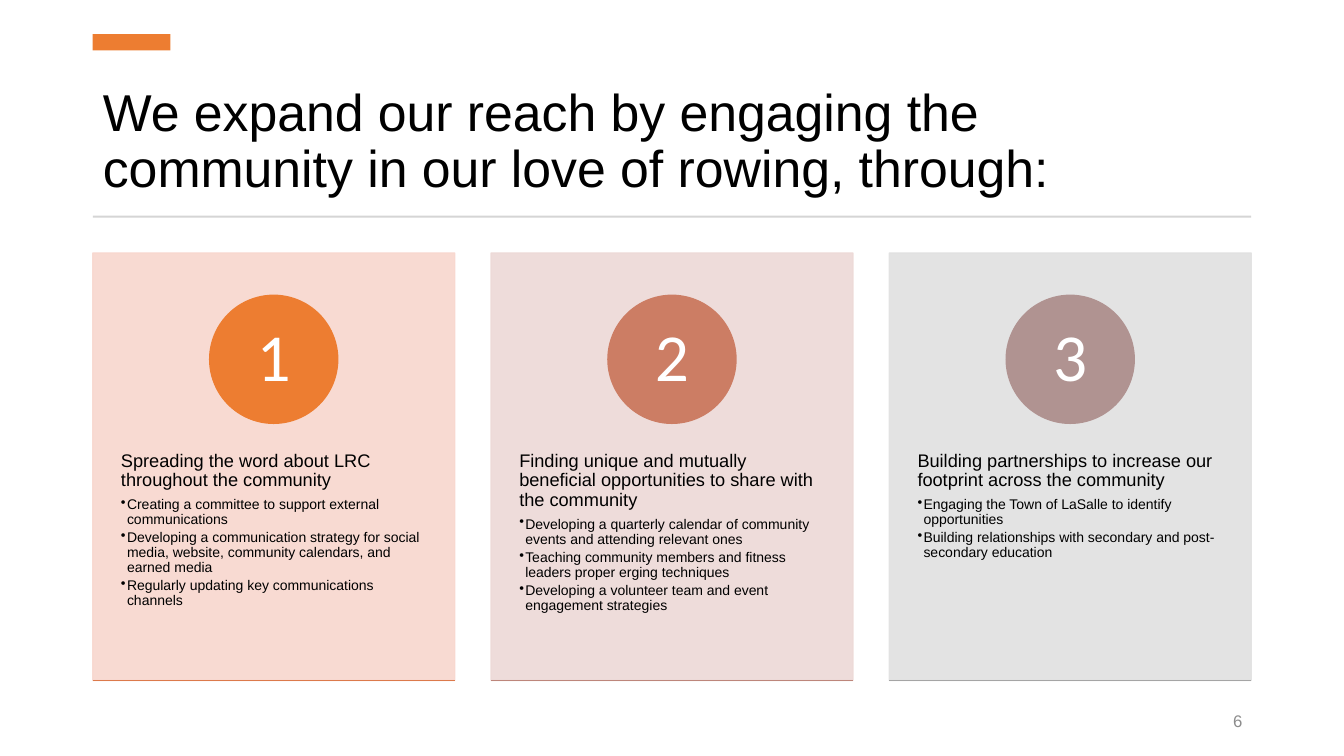
from dataclasses import dataclass

from lxml import etree
from pptx import Presentation, util as u
from pptx.dml import color
from pptx.enum import shapes, text
from pptx.oxml import ns

IN = u.Inches


@dataclass(frozen=True)
class Theme:
    """Colours, fonts and type sizes of the deck."""
    ink: str = "000000"
    white: str = "FFFFFF"
    accent: str = "ED7D31"
    rule: str = "D5D5D5"
    muted: str = "8C8C8C"
    sans: str = "Arial"
    digit: str = "Calibri"
    title: int = 37
    head: int = 13
    item: int = 10
    badge: int = 48
    foot: int = 12


T = Theme()

CARDS = [
    (("F8D7CE", "ED7D31", "DC7A4B"),
     "Spreading the word about LRC throughout the community",
     ["Creating a committee to support external communications",
      "Developing a communication strategy for social media, website, "
      "community calendars, and earned media",
      "Regularly updating key communications channels"]),
    (("EDD9D7", "CC7D64", "BD867B"),
     "Finding unique and mutually beneficial opportunities to share with the community",
     ["Developing a quarterly calendar of community events and attending relevant ones",
      "Teaching community members and fitness leaders proper erging techniques",
      "Developing a volunteer team and event engagement strategies"]),
    (("E1E1E1", "B09391", "A5A5A5"),
     "Building partnerships to increase our footprint across the community",
     ["Engaging the Town of LaSalle to identify opportunities",
      "Building relationships with secondary and post-secondary education"]),
]


def style(obj, **vals):
    """Set each given value on the object."""
    for name, val in vals.items():
        setattr(obj, name, val)


def child(node, tag, **attrs):
    """Append a drawing element to an XML node."""
    return etree.SubElement(node, ns.qn(tag), attrs)


def write(para, words, size, tone=T.ink, face=T.sans, **form):
    """Put one styled run in a paragraph."""
    style(para, **form)
    run = para.add_run()
    run.text = words
    style(run.font, size=u.Pt(size), name=face)
    run.font.color.rgb = color.RGBColor.from_string(tone)


def frame(slide, box, side=0.1, edge=0.05, anchor=text.MSO_ANCHOR.TOP):
    """Add a wrapping text box and return its frame."""
    body = slide.shapes.add_textbox(*map(IN, box)).text_frame
    style(body, word_wrap=True, vertical_anchor=anchor,
          margin_left=IN(side), margin_right=IN(side),
          margin_top=IN(edge), margin_bottom=IN(edge))
    return body


def block(slide, kind, box, tone, line=False, alpha=None):
    """Add a flat filled shape, with an outline if asked."""
    item = slide.shapes.add_shape(kind, *map(IN, box))
    item.shadow.inherit = False
    fills = [item.fill]
    if line:
        item.line.width = u.Pt(1)
        fills.append(item.line.fill)
    else:
        item.line.fill.background()
    for fill in fills:
        fill.solid()
        fill.fore_color.rgb = color.RGBColor.from_string(tone)
    if alpha:
        for node in item._element.spPr.iter(ns.qn("a:srgbClr")):
            child(node, "a:alpha", val=str(alpha * 1000))
    return item


def header(slide, box):
    """Place the accent tab, the title and the rule below it."""
    left, top, wide, high = box
    title = slide.shapes.title
    style(title, left=IN(left), top=IN(top + 0.41), width=IN(wide), height=IN(1.27))
    body = title.text_frame
    style(body, word_wrap=True, vertical_anchor=text.MSO_ANCHOR.BOTTOM,
          auto_size=text.MSO_AUTO_SIZE.NONE)
    write(body.paragraphs[0],
          "We expand our reach by engaging the community in our love of rowing, through:",
          T.title, alignment=text.PP_ALIGN.LEFT, line_spacing=0.9)
    rect = shapes.MSO_SHAPE.RECTANGLE
    block(slide, rect, (left, top, 0.77, 0.16), T.accent)
    block(slide, rect, (left, top + high - 0.02, wide, 0.02), T.rule)


def card(slide, box, num, tones, head, items):
    """Place one numbered card with its heading and bullets."""
    left, top, wide, high = box
    pale, disc, base = tones
    block(slide, shapes.MSO_SHAPE.RECTANGLE, box, pale, line=True, alpha=90)

    body = frame(slide, (left, top + 1.61, wide, 2.54), side=0.28, edge=0.36)
    write(body.paragraphs[0], head, T.head, line_spacing=0.9, space_after=u.Pt(4.5))
    for words in items:
        para = body.add_paragraph()
        write(para, words, T.item, level=1, line_spacing=0.9, space_after=u.Pt(2))
        props = para._p.get_or_add_pPr()
        props.set("marL", str(IN(0.06)))
        props.set("indent", str(IN(-0.06)))
        child(props, "a:buChar", char="•")

    size = 1.27
    badge = block(slide, shapes.MSO_SHAPE.OVAL,
                  (left + (wide - size) / 2, top + 0.42, size, size), disc, line=True)
    label = badge.text_frame
    style(label, vertical_anchor=text.MSO_ANCHOR.MIDDLE,
          margin_top=IN(0.01), margin_bottom=IN(0.01))
    write(label.paragraphs[0], str(num), T.badge, T.white, T.digit,
          alignment=text.PP_ALIGN.CENTER, line_spacing=0.9, space_after=u.Pt(0))

    foot = top + high
    line = slide.shapes.add_connector(
        shapes.MSO_CONNECTOR.STRAIGHT, *map(IN, (left, foot, left + wide, foot)))
    line.line.width = u.Pt(1)
    line.line.color.rgb = color.RGBColor.from_string(base)
    child(line._element.spPr, "a:effectLst")


def deck(slide, box, gap):
    """Share the box out among the cards in equal columns."""
    left, top, wide, high = box
    col = (wide - gap * (len(CARDS) - 1)) / len(CARDS)
    for num, data in enumerate(CARDS):
        card(slide, (left + num * (col + gap), top, col, high), num + 1, *data)


def footer(slide, box):
    """Place the page number."""
    body = frame(slide, box, anchor=text.MSO_ANCHOR.MIDDLE)
    write(body.paragraphs[0], "6", T.foot, T.muted, alignment=text.PP_ALIGN.RIGHT)


def main():
    """Build the slide and save it."""
    prs = Presentation()
    style(prs, slide_width=IN(13.33), slide_height=IN(7.5))
    slide = prs.slides.add_slide(prs.slide_layouts[5])
    header(slide, (0.92, 0.34, 11.49, 1.82))
    deck(slide, (0.92, 2.51, 11.49, 4.24), gap=0.36)
    footer(slide, (9.42, 6.95, 3, 0.4))
    prs.save("out.pptx")


if __name__ == "__main__":
    main()
